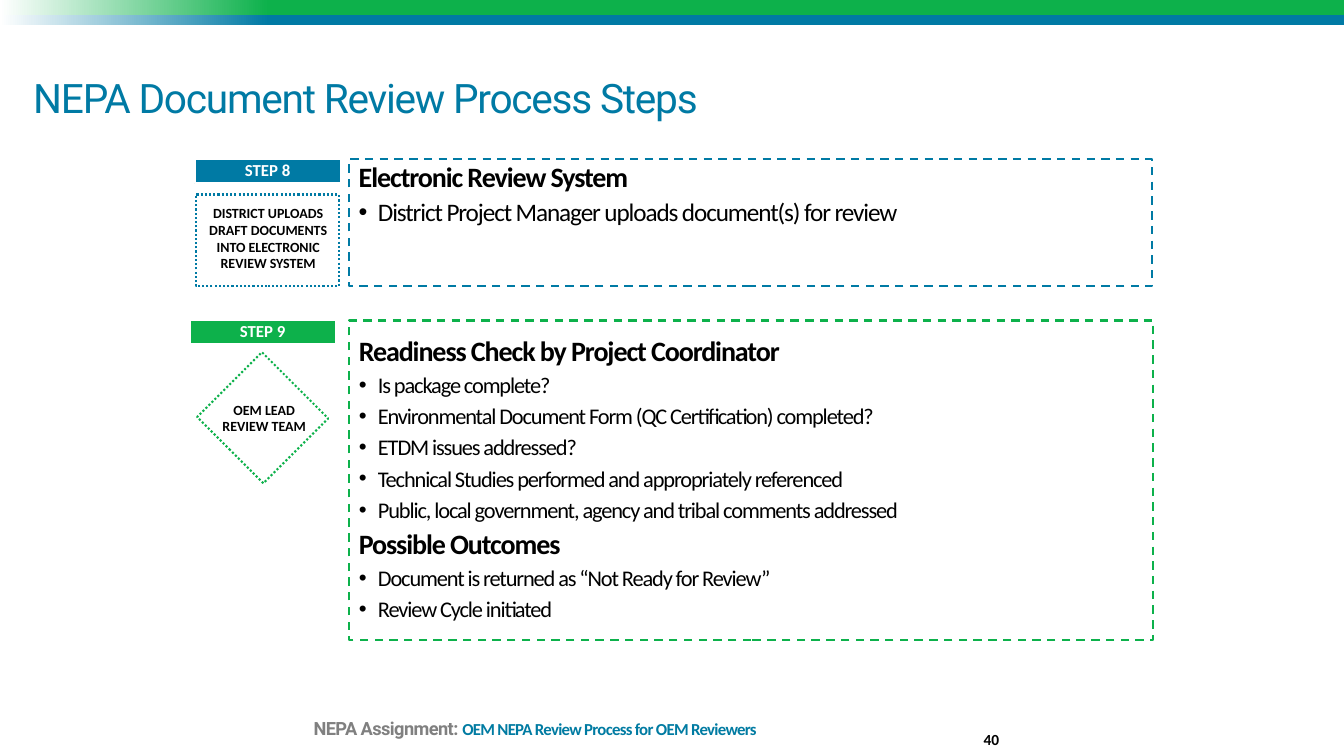
from lxml import etree
from pptx import Presentation
from pptx.dml.color import RGBColor
from pptx.enum.dml import MSO_LINE_DASH_STYLE as Dash
from pptx.enum.shapes import MSO_SHAPE as Shape
from pptx.enum.text import MSO_ANCHOR as Anchor, PP_ALIGN as Align
from pptx.oxml.ns import qn
from pptx.util import Inches, Pt

BLUE, GREEN, WHITE, BLACK = "007AA4", "0DB14B", "FFFFFF", "000000"
HEADING = {"size": 20, "bold": True, "spacing": -0.8}


def color(hex_code):
    return RGBColor.from_string(hex_code)


class SlideBuilder:
    """Holds the style and the current slide."""

    base = {"name": "Calibri", "size": 10, "bold": False, "color": BLACK, "spacing": 0}

    def __init__(self, slide):
        self.shapes = slide.shapes

    def add_words(self, paragraph, text, style):
        look = {**self.base, **style}
        words = paragraph.add_run()
        words.text = text
        words.font.color.rgb = color(look["color"])
        values = {"name": look["name"], "size": Pt(look["size"]), "bold": look["bold"]}
        for attribute, value in values.items():
            setattr(words.font, attribute, value)
        if look["spacing"]:
            words.font._element.set("spc", str(round(look["spacing"] * 100)))

    def bullet(self, paragraph):
        properties = paragraph._p.get_or_add_pPr()
        properties.set("marL", str(Inches(0.19)))
        properties.set("indent", str(-Inches(0.19)))
        etree.SubElement(properties, qn("a:buFont"), typeface="Arial")
        etree.SubElement(properties, qn("a:buChar"), char="•")

    def fill_text(self, shape, paragraphs, anchor=Anchor.TOP, margins=None, **layout):
        """Each paragraph is a list of (text, style) runs."""
        frame = shape.text_frame
        frame.word_wrap = True
        frame.vertical_anchor = anchor
        if margins is not None:
            for side in ("left", "top", "right", "bottom"):
                setattr(frame, f"margin_{side}", Inches(margins))
        for index, runs in enumerate(paragraphs):
            paragraph = frame.add_paragraph() if index else frame.paragraphs[0]
            if runs[0][1].get("bullet"):
                self.bullet(paragraph)
            for attribute, value in {"alignment": Align.LEFT, **layout}.items():
                setattr(paragraph, attribute, value)
            for text, style in runs:
                self.add_words(paragraph, text, style)

    def text(self, box, paragraphs, **layout):
        self.fill_text(self.shapes.add_textbox(*map(Inches, box)), paragraphs, **layout)

    def rect(self, box, fill=None, line=None, dash=None, rotation=0):
        shape = self.shapes.add_shape(Shape.RECTANGLE, *map(Inches, box))
        shape.shadow.inherit = False
        shape.rotation = rotation
        if fill:
            shape.fill.solid()
            shape.fill.fore_color.rgb = color(fill)
        else:
            shape.fill.background()
        if line:
            shape.line.color.rgb = color(line)
            shape.line.width = Pt(1.5)
            if dash:
                shape.line.dash_style = dash
        else:
            shape.line.fill.background()
        return shape

    def fading_band(self, top, height, end_color):
        band = self.rect((0, top, 13.33, height))
        band.fill.gradient()
        band.fill.gradient_angle = 0
        stops = ((0, WHITE), (0.2, end_color))
        for stop, (position, hex_code) in zip(band.fill.gradient_stops, stops):
            stop.position = position
            stop.color.rgb = color(hex_code)

    def step_label(self, left, top, text, fill):
        label = self.rect((left, top, 1.45, 0.24), fill, WHITE)
        style = {"size": 12, "bold": True, "color": WHITE}
        self.fill_text(label, [[(text, style)]], Anchor.MIDDLE, 0.05,
                       alignment=Align.CENTER, line_spacing=0.9)

    def caption(self, box, *lines):
        self.text(box, [[(line, {"bold": True})] for line in lines],
                  alignment=Align.CENTER)

    def detail_panel(self, box, line, sections, size, anchor=Anchor.TOP):
        item = {"size": size, "spacing": -0.8, "bullet": True}
        paragraphs = []
        for heading, items in sections.items():
            paragraphs.append([(heading, HEADING)])
            paragraphs += [[(text, item)] for text in items]
        self.fill_text(self.rect(box, line=line, dash=Dash.DASH), paragraphs, anchor,
                       line_spacing=0.85, space_after=Pt(6))


def main():
    deck = Presentation()
    deck.slide_width, deck.slide_height = Inches(13.33), Inches(7.5)
    page = SlideBuilder(deck.slides.add_slide(deck.slide_layouts[6]))

    # Header bands and title
    page.fading_band(0, 0.15, GREEN)
    page.fading_band(0.15, 0.1, BLUE)
    title = {"name": "Roboto", "size": 29, "color": BLUE, "spacing": -0.9}
    page.text((0.33, 0.3, 12, 0.9), [[("NEPA Document Review Process Steps", title)]],
              anchor=Anchor.BOTTOM, margins=0, line_spacing=0.8)

    # Footer and page number
    course = {"name": "Roboto", "size": 13, "bold": True, "color": "808080", "spacing": -0.4}
    module = {"size": 12, "bold": True, "color": "007BA2", "spacing": -0.5}
    page.text((3.11, 6.86, 7.21, 0.47),
              [[("NEPA Assignment: ", course),
                ("OEM NEPA Review Process for OEM Reviewers", module)]],
              anchor=Anchor.BOTTOM, margins=0, line_spacing=0.8, space_after=Pt(12))
    page.text((9.33, 7.03, 0.58, 0.4), [[("40", {"size": 11, "bold": True})]],
              anchor=Anchor.BOTTOM, margins=0, alignment=Align.RIGHT)

    # Step 8: upload
    page.step_label(1.93, 1.58, "STEP 8", BLUE)
    page.rect((1.94, 1.93, 1.42, 0.91), line=BLUE, dash=Dash.ROUND_DOT)
    page.caption((1.88, 1.98, 1.56, 0.77),
                 "DISTRICT UPLOADS DRAFT DOCUMENTS INTO ELECTRONIC REVIEW SYSTEM")
    page.detail_panel((3.46, 1.58, 7.97, 1.26), BLUE, {
        "Electronic Review System": [
            "District Project Manager uploads document(s) for review"],
    }, 18)

    # Step 9: readiness check
    page.step_label(1.88, 3.17, "STEP 9", GREEN)
    page.rect((2.14, 3.69, 0.93, 0.91), line=GREEN, dash=Dash.ROUND_DOT, rotation=45)
    page.caption((1.84, 3.93, 1.56, 0.44), "OEM LEAD", "REVIEW TEAM")
    page.detail_panel((3.46, 3.18, 7.98, 3.17), GREEN, {
        "Readiness Check by Project Coordinator": [
            "Is package complete?",
            "Environmental Document Form (QC Certification) completed?",
            "ETDM issues addressed?",
            "Technical Studies performed and appropriately referenced",
            "Public, local government, agency and tribal comments addressed"],
        "Possible Outcomes": [
            "Document is returned as “Not Ready for Review”",
            "Review Cycle initiated"],
    }, 16, Anchor.MIDDLE)

    deck.save("out.pptx")


if __name__ == "__main__":
    main()
